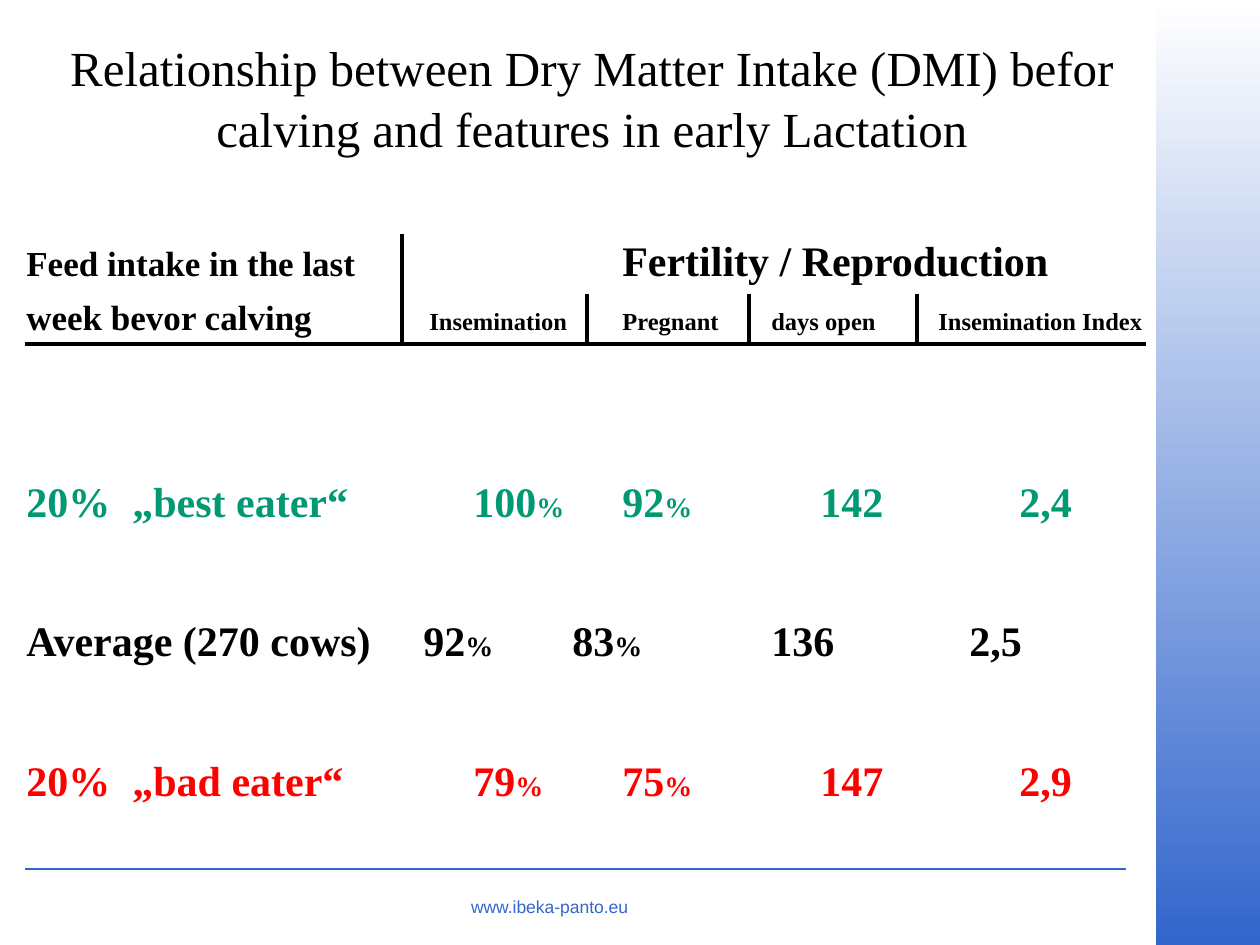
from lxml import etree
from pptx import Presentation
from pptx import util as u
from pptx.dml.color import RGBColor
from pptx.enum import shapes, text
from pptx.oxml.ns import qn

SCALE = 914400 / 126
SERIF = "Times New Roman"
BLACK, GREEN, RED, BLUE, WHITE = "000000", "009973", "FF0000", "3366CC", "FFFFFF"
TEXT_LEFT = 26


def px(length):
    """Turn pixels into EMU."""
    return u.Emu(round(length * SCALE))


def rgb(value):
    """Turn a hex string into a colour."""
    return RGBColor.from_string(value)


class Canvas:
    """Hold the text style and the current slide."""

    def __init__(self, slide, font, color):
        """Start with a slide, a font and a text colour."""
        self.slide, self.font, self.color = slide, font, color

    def gradient(self, left, top, width, height, start, end):
        """Draw a rectangle that fades downwards."""
        band = self.slide.shapes.add_shape(
            shapes.MSO_SHAPE.RECTANGLE, px(left), px(top), px(width), px(height))
        band.shadow.inherit = False
        band.line.fill.background()
        band.fill.gradient()
        band.fill.gradient_angle = 270
        for stop, color, position in zip(band.fill.gradient_stops, (start, end), (0, 1)):
            stop.color.rgb = rgb(color)
            stop.position = position

    def line(self, x1, y1, x2, y2, color, weight):
        """Draw a straight line."""
        rule = self.slide.shapes.add_connector(
            shapes.MSO_CONNECTOR.STRAIGHT, px(x1), px(y1), px(x2), px(y2))
        rule.line.color.rgb = rgb(color)
        rule.line.width = u.Pt(weight)
        etree.SubElement(rule._element.spPr, qn("a:effectLst"))

    def box(self, left, top, width, height, wrap=True, anchor=text.MSO_ANCHOR.TOP):
        """Add a text box and return its frame."""
        frame = self.slide.shapes.add_textbox(
            px(left), px(top), px(width), px(height)).text_frame
        frame.word_wrap = wrap
        frame.vertical_anchor = anchor
        return frame

    def para(self, frame, spans, before=0, spacing=1, tabs=(), align=text.PP_ALIGN.LEFT,
             color=None, font=None, bold=False):
        """Write a paragraph of (text, size) spans with tab stops in slide pixels."""
        first = frame.paragraphs[0]
        para = frame.add_paragraph() if first.runs else first
        para.alignment = align
        para.space_before = u.Pt(before)
        para.line_spacing = spacing
        if tabs:
            stops = etree.SubElement(para._p.get_or_add_pPr(), qn("a:tabLst"))
            for stop in tabs:
                etree.SubElement(stops, qn("a:tab"), pos=str(px(stop - TEXT_LEFT)), algn="l")
        for words, size in spans:
            span = para.add_run()
            span.text = words
            span.font.size = u.Pt(size)
            span.font.bold = bold
            span.font.name = font or self.font
            span.font.color.rgb = rgb(color or self.color)


def main():
    """Build the slide."""
    deck = Presentation()
    deck.slide_width, deck.slide_height = px(1260), px(945)
    page = Canvas(deck.slides.add_slide(deck.slide_layouts[6]), SERIF, BLACK)
    center = text.PP_ALIGN.CENTER

    page.gradient(1156, 0, 104, 945, WHITE, BLUE)
    page.line(1126, 869, 25, 869, BLUE, 1)
    footer = page.box(457, 890, 185, 34, wrap=False, anchor=text.MSO_ANCHOR.MIDDLE)
    page.para(footer, [("www.ibeka-panto.eu", 10)], align=center, color=BLUE, font="Arial")

    title = page.box(25, 28, 1134, 158)
    page.para(title, [("Relationship between Dry Matter Intake (DMI) befor "
                       "calving and features in early Lactation", 28)],
              spacing=1.05, align=center)

    body = page.box(14, 228, 1162, 605)
    page.para(body, [("Feed intake in the last\t", 20), ("Fertility / Reproduction", 24)],
              tabs=[622], bold=True)
    page.para(body, [("week bevor calving", 20),
                     ("\tInsemination\tPregnant\tdays open\tInsemination Index", 14)],
              before=6, tabs=[429, 622, 771, 938], bold=True)

    wide = [132, 473, 622, 820, 1019]
    rows = [
        ("20%\t„best eater“", 100, 92, 142, "2,4", GREEN, wide, 36),
        ("Average (270 cows)", 92, 83, 136, "2,5", BLACK, [423, 572, 771, 969], 7.6),
        ("20%\t„bad eater“", 79, 75, 147, "2,9", RED, wide, 7.6),
    ]
    for group, inseminated, pregnant, days, index, color, tabs, before in rows:
        page.para(body, [(f"{group}\t{inseminated}", 24), ("%", 16), (f"\t{pregnant}", 24),
                         ("%", 16), (f"\t{days}\t{index}", 24)],
                  before=before, spacing=2.5, tabs=tabs, color=color, bold=True)

    page.line(25, 344, 1146, 344, BLACK, 2.25)
    for x, top in ((402, 234), (587, 294), (749, 294), (917, 294)):
        page.line(x, top, x, 344, BLACK, 2)

    deck.save("out.pptx")


if __name__ == "__main__":
    main()
